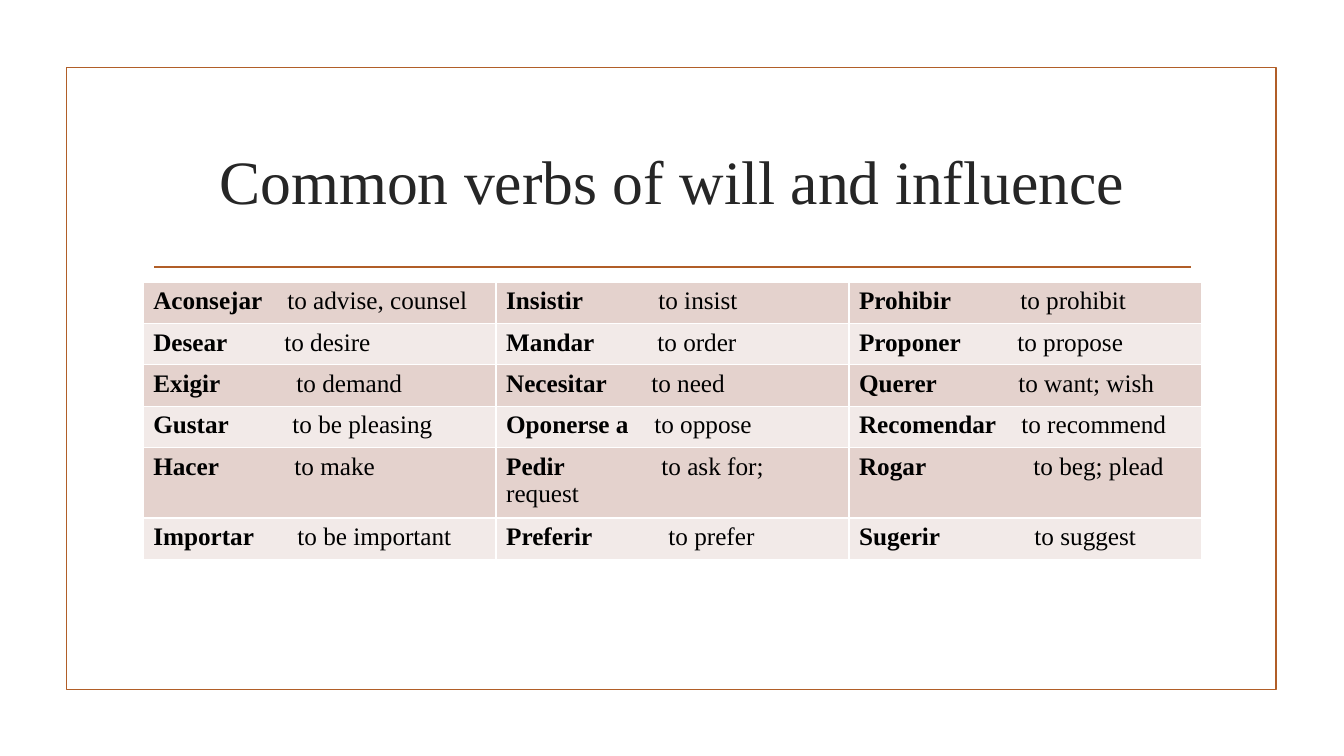
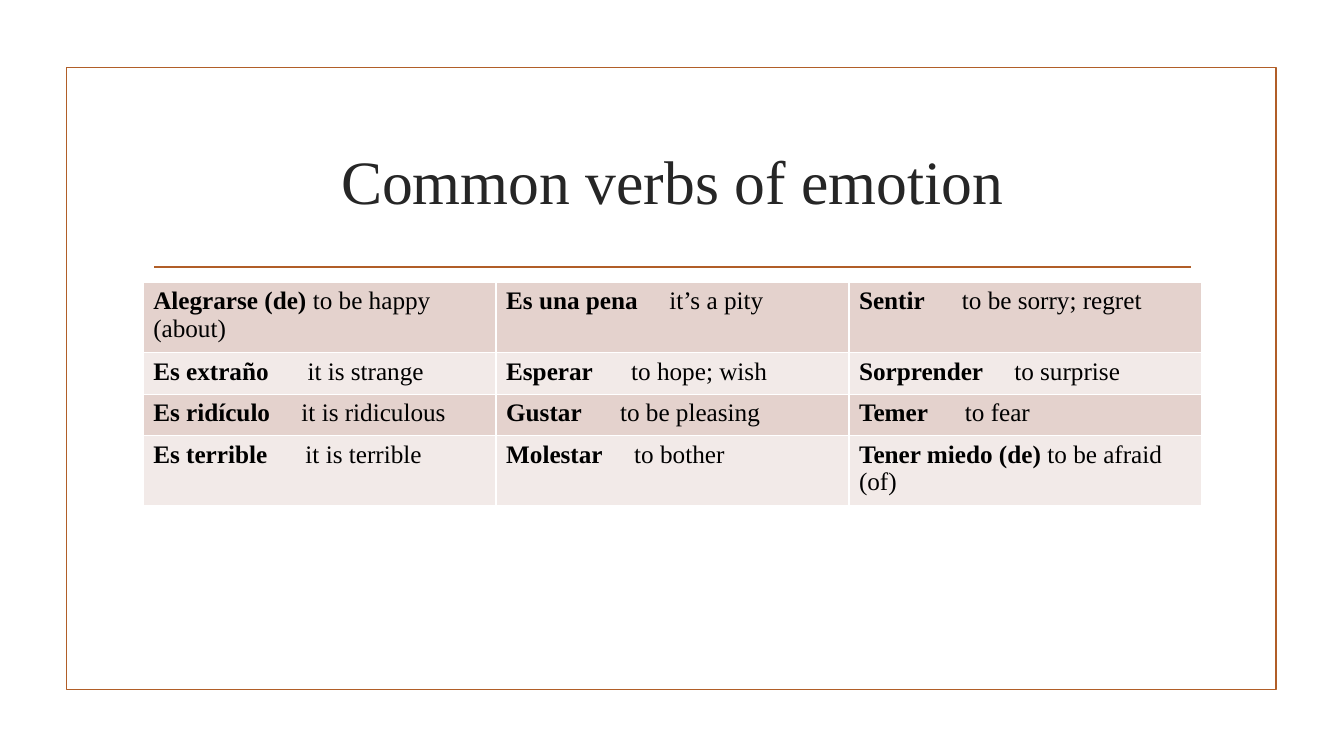
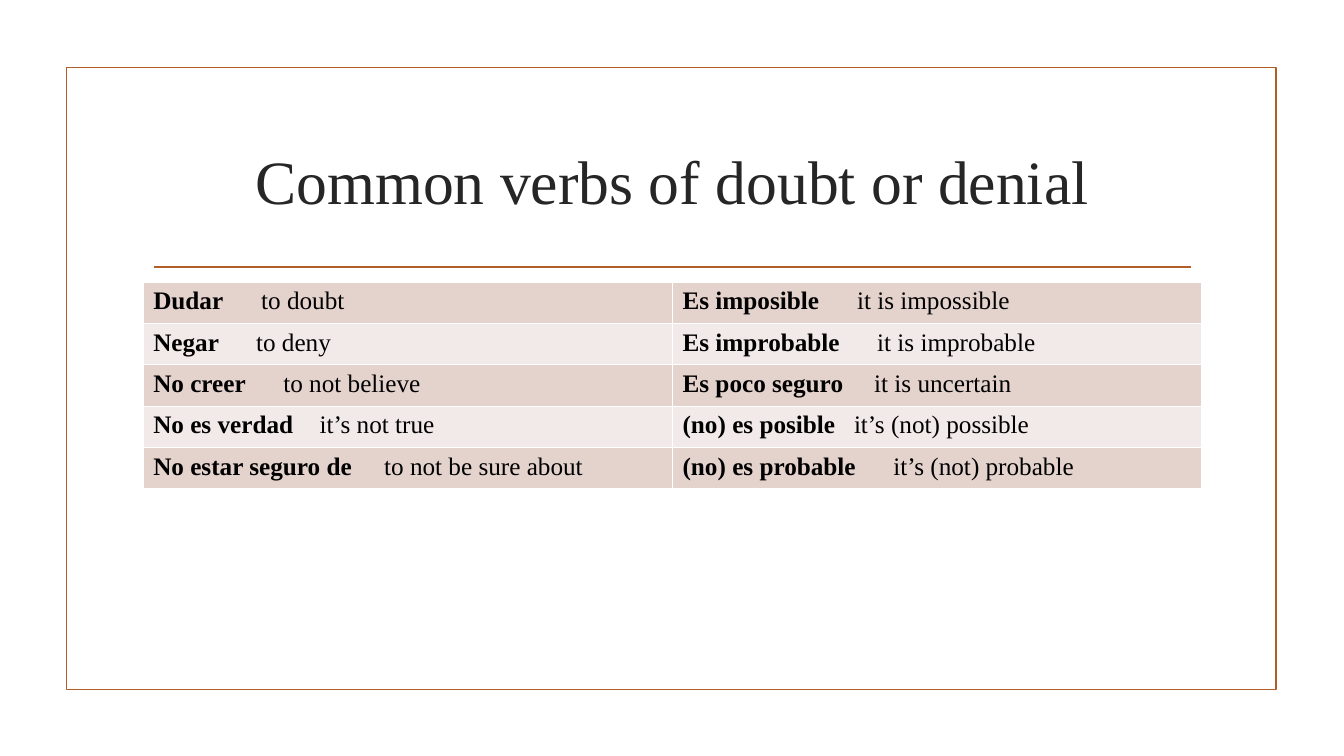
import pptx
import pptx.dml.color
import pptx.enum.shapes
import pptx.enum.text
import pptx.oxml
import pptx.oxml.ns
import pptx.util
from dataclasses import dataclass

Inches = pptx.util.Inches
Pt = pptx.util.Pt


@dataclass(frozen=True)
class Theme:
    font: str = "Times New Roman"
    accent: str = "B15E28"
    title_color: str = "262626"
    text_color: str = "000000"
    border: str = "FFFFFF"
    bands: tuple = ("E4D2CD", "F2EAE8")
    title_size: float = 44
    body_size: float = 18
    rule_width: float = 1.25
    border_width: float = 1


THEME = Theme()
CONTENT_LEFT, CONTENT_WIDTH = 1.42, 10.5
TABLE_TOP, ROW_HEIGHT = 2.8, 0.41

# Each cell: verb, meaning, tab stop in inches (None joins them with a space).
SLIDES = [
    ("Common verbs of will and influence", [
        [("Aconsejar", "to advise, counsel", 1.33),
         ("Insistir", "to insist", 1.51),
         ("Prohibir", "to prohibit", 1.6)],
        [("Desear", "to desire", 1.3),
         ("Mandar", "to order", 1.5),
         ("Proponer", "to propose", 1.57)],
        [("Exigir", "to demand", 1.42),
         ("Necesitar", "to need", 1.44),
         ("Querer", "to want; wish", 1.58)],
        [("Gustar", "to be pleasing", 1.38),
         ("Oponerse a", "to oppose", 1.47),
         ("Recomendar", "to recommend", 1.61)],
        [("Hacer", "to make", 1.4),
         ("Pedir", "to ask for; request", 1.54),
         ("Rogar", "to beg; plead", 1.73)],
        [("Importar", "to be important", 1.43),
         ("Preferir", "to prefer", 1.61),
         ("Sugerir", "to suggest", 1.74)],
    ]),
    ("Common verbs of emotion", [
        [("Alegrarse (de)", "to be happy (about)", None),
         ("Es una pena", "it’s a pity", 1.62),
         ("Sentir", "to be sorry; regret", 1.02)],
        [("Es extraño", "it is strange", 1.53),
         ("Esperar", "to hope; wish", 1.24),
         ("Sorprender", "to surprise", 1.54)],
        [("Es ridículo", "it is ridiculous", 1.47),
         ("Gustar", "to be pleasing", 1.13),
         ("Temer", "to fear", 1.05)],
        [("Es terrible", "it is terrible", 1.51),
         ("Molestar", "to bother", 1.27),
         ("Tener miedo (de)", "to be afraid (of)", None)],
    ]),
    ("Common verbs of doubt or denial", [
        [("Dudar", "to doubt", 1.07),
         ("Es imposible", "it is impossible", 1.73)],
        [("Negar", "to deny", 1.02),
         ("Es improbable", "it is improbable", 1.93)],
        [("No creer", "to not believe", 1.29),
         ("Es poco seguro", "it is uncertain", 1.9)],
        [("No es verdad", "it’s not true", 1.65),
         ("(no) es posible", "it’s (not) possible", 1.7)],
        [("No estar seguro de", "to not be sure about", 2.29),
         ("(no) es probable", "it’s (not) probable", 2.09)],
    ]),
]


def rgb(value):
    return pptx.dml.color.RGBColor.from_string(value)


def write(paragraph, text, size=THEME.body_size, color=THEME.text_color, bold=False):
    run = paragraph.add_run()
    run.text = text
    run.font.name = THEME.font
    run.font.size = Pt(size)
    run.font.bold = bold
    run.font.color.rgb = rgb(color)


def add_tab_stop(paragraph, position):
    properties = paragraph._p.get_or_add_pPr()
    properties.append(pptx.oxml.parse_xml(
        f'<a:tabLst {pptx.oxml.ns.nsdecls("a")}>'
        f'<a:tab pos="{Inches(position)}" algn="l"/></a:tabLst>'))


def set_cell_borders(cell):
    properties = cell._tc.get_or_add_tcPr()
    for side in ("lnL", "lnR", "lnT", "lnB"):
        properties.append(pptx.oxml.parse_xml(
            f'<a:{side} {pptx.oxml.ns.nsdecls("a")} w="{Pt(THEME.border_width)}">'
            f'<a:solidFill><a:srgbClr val="{THEME.border}"/></a:solidFill></a:{side}>'))


class Deck:
    def __init__(self):
        self.presentation = pptx.Presentation()
        self.presentation.slide_width = Inches(13.33)
        self.presentation.slide_height = Inches(7.5)
        self.slide = None

    def add_slide(self, title, rows):
        self.slide = self.presentation.slides.add_slide(
            self.presentation.slide_layouts[6])
        self.add_frame()
        self.add_rule()
        self.add_title(title)
        self.add_verb_table(rows)

    def add_frame(self):
        frame = self.slide.shapes.add_shape(
            pptx.enum.shapes.MSO_SHAPE.RECTANGLE,
            Inches(0.66), Inches(0.67), Inches(12), Inches(6.17))
        frame.shadow.inherit = False
        frame.fill.background()
        self.style_line(frame.line)

    def add_rule(self):
        rule = self.slide.shapes.add_connector(
            pptx.enum.shapes.MSO_CONNECTOR.STRAIGHT,
            Inches(1.53), Inches(2.65), Inches(11.81), Inches(2.65))
        self.style_line(rule.line)
        rule._element.spPr.append(pptx.oxml.parse_xml(
            f'<a:effectLst {pptx.oxml.ns.nsdecls("a")}/>'))

    def style_line(self, line):
        line.color.rgb = rgb(THEME.accent)
        line.width = Pt(THEME.rule_width)

    def add_title(self, text):
        box = self.slide.shapes.add_textbox(
            Inches(CONTENT_LEFT), Inches(1.07), Inches(CONTENT_WIDTH), Inches(1.43))
        frame = box.text_frame
        frame.word_wrap = True
        frame.vertical_anchor = pptx.enum.text.MSO_ANCHOR.MIDDLE
        paragraph = frame.paragraphs[0]
        paragraph.alignment = pptx.enum.text.PP_ALIGN.CENTER
        write(paragraph, text, size=THEME.title_size, color=THEME.title_color)

    def add_verb_table(self, rows):
        column_count = len(rows[0])
        table = self.slide.shapes.add_table(
            len(rows), column_count, Inches(CONTENT_LEFT), Inches(TABLE_TOP),
            Inches(CONTENT_WIDTH), Inches(ROW_HEIGHT * len(rows))).table
        table.first_row = False
        table.horz_banding = False
        for column in table.columns:
            column.width = Inches(CONTENT_WIDTH / column_count)
        for row_index, entries in enumerate(rows):
            table.rows[row_index].height = Inches(ROW_HEIGHT)
            band = THEME.bands[row_index % len(THEME.bands)]
            for column_index, entry in enumerate(entries):
                self.fill_cell(table.cell(row_index, column_index), band, *entry)

    def fill_cell(self, cell, band, verb, meaning, tab_stop):
        set_cell_borders(cell)
        cell.fill.solid()
        cell.fill.fore_color.rgb = rgb(band)
        paragraph = cell.text_frame.paragraphs[0]
        separator = " "
        if tab_stop is not None:
            add_tab_stop(paragraph, tab_stop)
            separator = "\t"
        write(paragraph, verb, bold=True)
        write(paragraph, separator + meaning)


def main():
    deck = Deck()
    for title, rows in SLIDES:
        deck.add_slide(title, rows)
    deck.presentation.save("out.pptx")


if __name__ == "__main__":
    main()
